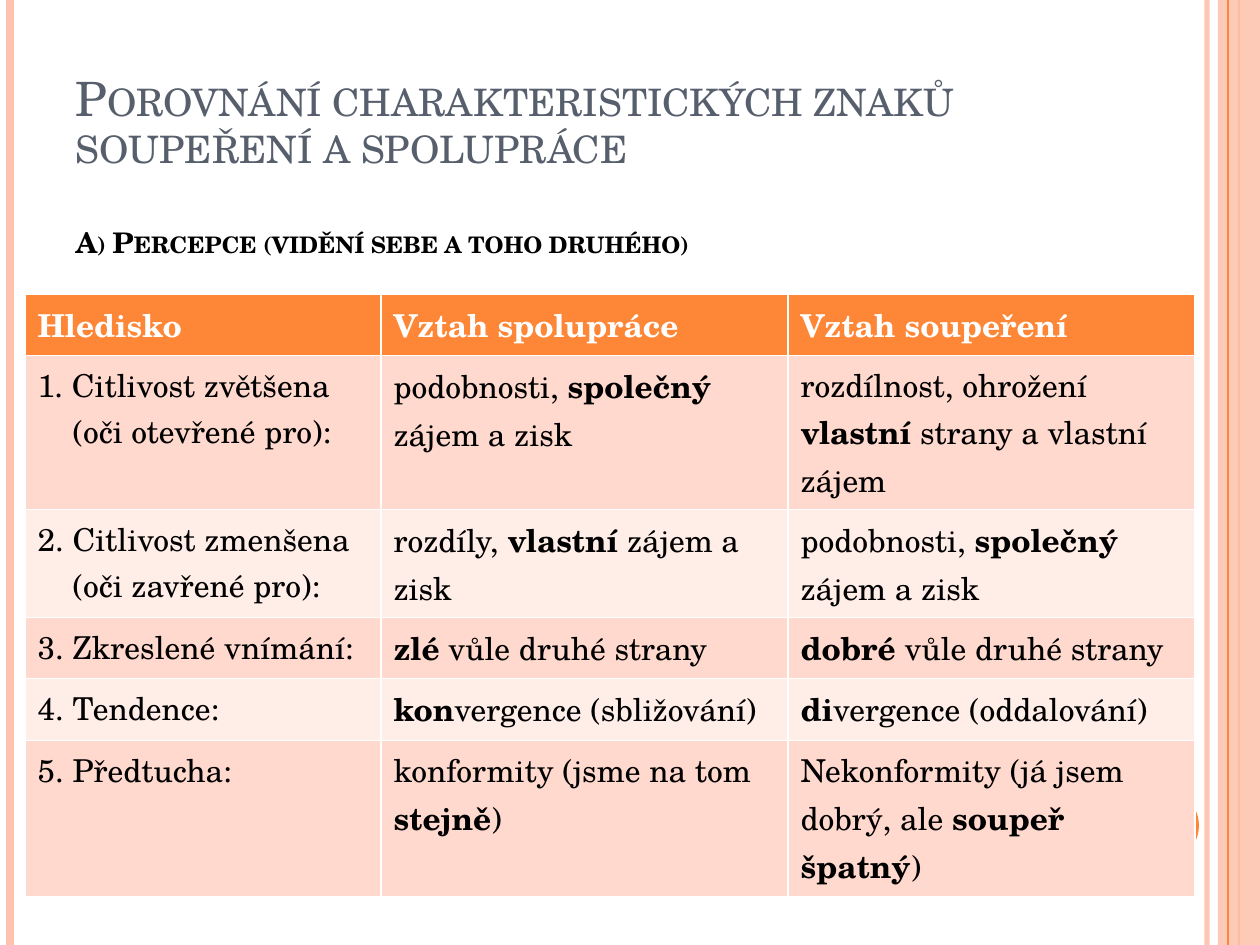
"""Build a slide comparing cooperative and competitive relationships."""
from dataclasses import dataclass

from lxml import etree
from pptx import Presentation
from pptx.dml.color import RGBColor
from pptx.enum.shapes import MSO_CONNECTOR, MSO_SHAPE
from pptx.enum.text import MSO_ANCHOR, MSO_AUTO_SIZE, PP_ALIGN
from pptx.oxml.ns import qn
from pptx.util import Emu, Pt

STRAIGHT = MSO_CONNECTOR.STRAIGHT
RECTANGLE, OVAL = MSO_SHAPE.RECTANGLE, MSO_SHAPE.OVAL
BOTTOM, LEFT, NO_AUTOFIT = MSO_ANCHOR.BOTTOM, PP_ALIGN.LEFT, MSO_AUTO_SIZE.NONE

FONT = "TeX Gyre Schola"
ORANGE, PEACH, SLATE = "FE8637", "FEC3AE", "575F6D"
BLACK, WHITE = "000000", "FFFFFF"
BANDS = ("FFD9CE", "FFEDE8")
PAGE_WIDTH, PAGE_HEIGHT = 1260, 945
HANGING_INDENT = 35

COLUMN_WIDTHS = (356, 407, 407)
ROW_HEIGHTS = (60, 154, 108, 61, 62, 155)
ROWS = (
    ("**Hledisko**", "**Vztah spolupráce**", "**Vztah soupeření**"),
    ("1. Citlivost zvětšena\n(oči otevřené pro):",
     "podobnosti, **společný **zájem a zisk",
     "rozdílnost, ohrožení **vlastní** strany a vlastní zájem"),
    ("2. Citlivost zmenšena\n(oči zavřené pro):",
     "rozdíly, **vlastní** zájem a zisk",
     "podobnosti, **společný** zájem a zisk"),
    ("3. Zkreslené vnímání:", "**zlé** vůle druhé strany", "**dobré **vůle druhé strany"),
    ("4. Tendence:", "**kon**vergence (sbližování)", "**di**vergence (oddalování)"),
    ("5. Předtucha:", "konformity (jsme na tom **stejně**)",
     "Nekonformity (já jsem dobrý, ale **soupeř špatný**)"),
)


@dataclass
class Stripe:
    """A vertical line running the full page height."""
    x: int
    color: str
    width: float
    opacity: int = 100


@dataclass
class Block:
    """A filled shape without an outline."""
    kind: int
    x: int
    y: int
    width: int
    height: int
    color: str
    opacity: int = 100


@dataclass
class Heading:
    """One paragraph of the title."""
    text: str
    size: float
    color: str
    bold: bool
    space_before: float


DECORATIONS = (
    Stripe(1207, PEACH, 3, 93),
    Stripe(10, PEACH, 4.5),
    Stripe(1239, ORANGE, 1.5),
    Block(RECTANGLE, 1218, 0, 42, PAGE_HEIGHT, PEACH, 87),
    Stripe(1228, ORANGE, 0.75),
    Block(OVAL, 1124, 788, 75, 75, ORANGE),
)
HEADINGS = (
    Heading("Porovnání charakteristických znaků soupeření a spolupráce", 27, SLATE, False, 0),
    Heading("A) Percepce (vidění sebe a toho druhého)", 16.2, BLACK, True, 33),
)


def px(length: int) -> Emu:
    """Turn px into EMU."""
    return Emu(round(length * 914400 / 126))


def rgb(color: str) -> RGBColor:
    """Turn a hex string into a colour."""
    return RGBColor.from_string(color)


def paint(fill, color: str, opacity: int, element) -> None:
    """Fill with a solid colour and, if needed, an opacity."""
    fill.solid()
    fill.fore_color.rgb = rgb(color)
    if opacity < 100:
        tint = next(element.iter(qn("a:srgbClr")))
        etree.SubElement(tint, qn("a:alpha"), val=str(opacity * 1000))


def draw_stripe(page, stripe: Stripe) -> None:
    """Draw a vertical stripe."""
    line = page.shapes.add_connector(STRAIGHT, px(stripe.x), 0, px(stripe.x), px(PAGE_HEIGHT))
    line.line.width = Pt(stripe.width)
    properties = line._element.spPr
    paint(line.line.fill, stripe.color, stripe.opacity, properties)
    etree.SubElement(properties, qn("a:effectLst"))


def draw_block(page, block: Block) -> None:
    """Draw a plain filled shape."""
    shape = page.shapes.add_shape(
        block.kind, px(block.x), px(block.y), px(block.width), px(block.height))
    shape.shadow.inherit = False
    paint(shape.fill, block.color, block.opacity, shape._element.spPr)
    shape.line.fill.background()


def format_span(span, size: float, color: str, bold: bool) -> None:
    """Set the font of a run."""
    span.font.name = FONT
    span.font.size = Pt(size)
    span.font.bold = bold
    span.font.color.rgb = rgb(color)


def write_title(page) -> None:
    """Place the title and write its headings in small capitals."""
    title = page.shapes.title
    title.left, title.top, title.width, title.height = px(63), px(38), px(1029), px(227)
    frame = title.text_frame
    frame.auto_size = NO_AUTOFIT
    frame.vertical_anchor = BOTTOM
    frame.text = "\n".join(heading.text for heading in HEADINGS)
    for para, heading in zip(frame.paragraphs, HEADINGS):
        para.alignment = LEFT
        para.line_spacing = 0.83
        para.space_before = Pt(heading.space_before)
        span = para.runs[0]
        format_span(span, heading.size, heading.color, heading.bold)
        span.font._element.set("cap", "small")


def write_cell(cell, text: str, fill: str, color: str) -> None:
    """Fill a cell and write its text, with ** around bold words."""
    cell.fill.solid()
    cell.fill.fore_color.rgb = rgb(fill)
    frame = cell.text_frame
    for number, line in enumerate(text.split("\n")):
        para = frame.add_paragraph() if number else frame.paragraphs[0]
        if number:
            para._p.get_or_add_pPr().set("marL", str(px(HANGING_INDENT)))
        for index, part in enumerate(line.split("**")):
            if part:
                span = para.add_run()
                span.text = part
                format_span(span, 18, color, index % 2 == 1)


def draw_table(page) -> None:
    """Draw the comparison table."""
    table = page.shapes.add_table(
        len(ROWS), len(COLUMN_WIDTHS), px(25), px(294),
        px(sum(COLUMN_WIDTHS)), px(sum(ROW_HEIGHTS))).table
    for column, width in zip(table.columns, COLUMN_WIDTHS):
        column.width = px(width)
    for index, (row, height, texts) in enumerate(zip(table.rows, ROW_HEIGHTS, ROWS)):
        row.height = px(height)
        fill, color = (BANDS[(index - 1) % 2], BLACK) if index else (ORANGE, WHITE)
        for cell, text in zip(row.cells, texts):
            write_cell(cell, text, fill, color)


def main() -> None:
    """Build and save the deck."""
    deck = Presentation()
    deck.slide_width, deck.slide_height = px(PAGE_WIDTH), px(PAGE_HEIGHT)
    page = deck.slides.add_slide(deck.slide_layouts[5])
    for item in DECORATIONS:
        if isinstance(item, Stripe):
            draw_stripe(page, item)
        else:
            draw_block(page, item)
    write_title(page)
    draw_table(page)
    deck.save("out.pptx")


if __name__ == "__main__":
    main()
